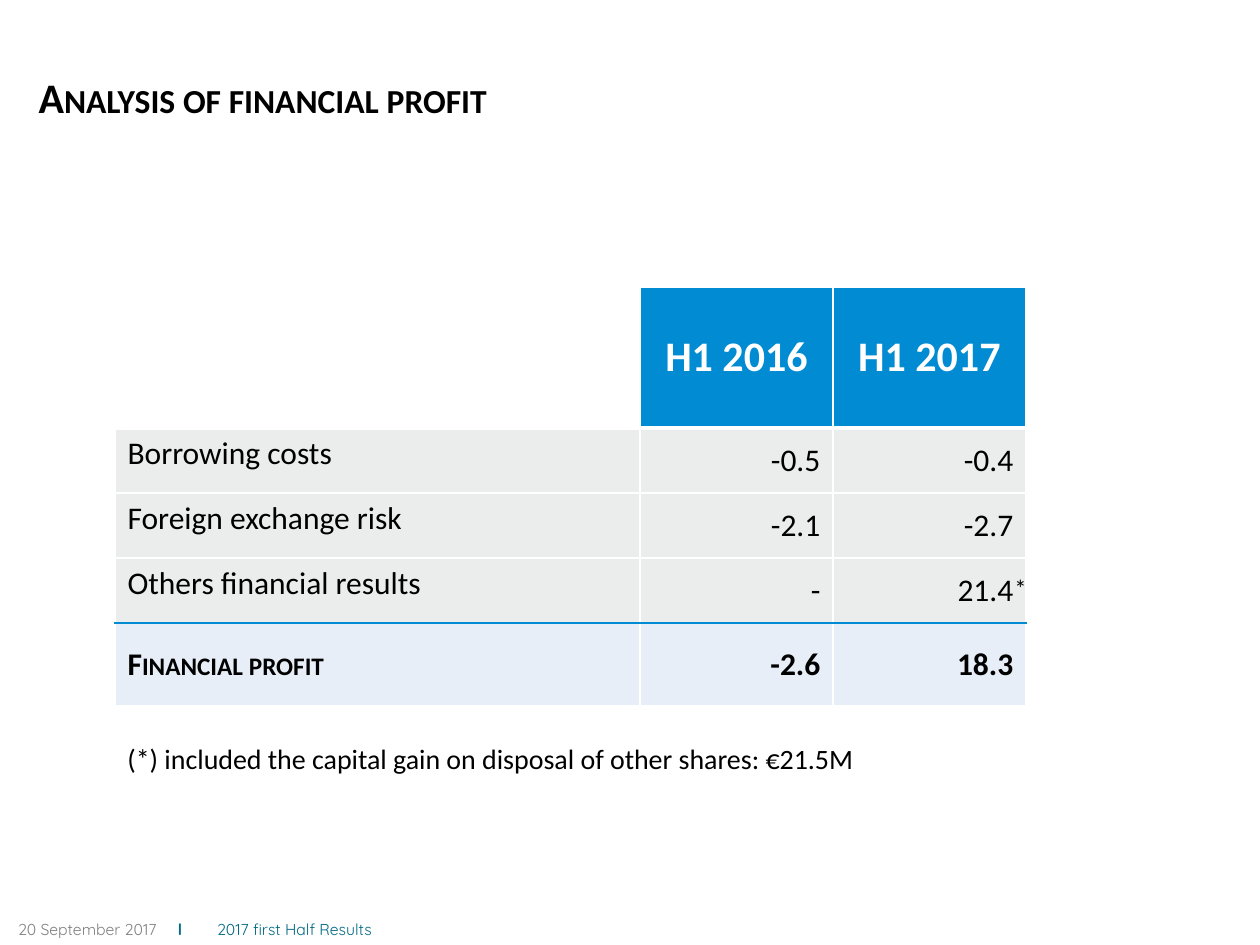
from lxml.etree import SubElement
from pptx import Presentation
from pptx.dml.color import RGBColor
from pptx.enum.text import MSO_ANCHOR as Anchor, MSO_AUTO_SIZE as AutoSize, PP_ALIGN as Align
from pptx.oxml.ns import qn
from pptx.util import Pt

SCALE = 914400 / 126
BLACK, WHITE, BLUE, TEAL, GREY = "000000", "FFFFFF", "008BD2", "006983", "808080"
ROW_FILL, TOTAL_FILL = "EBECEC", "E7EEF7"

TITLE = "Analysis of financial profit"
ROWS = [
    ("", "H1 2016", "H1 2017"),
    ("Borrowing costs", "-0.5", "-0.4"),
    ("Foreign exchange risk", "-2.1", "-2.7"),
    ("Others financial results", "-", "21.4"),
    ("Financial profit", "-2.6", "18.3"),
]
COLUMN_WIDTHS = [525, 193, 193]
ROW_HEIGHTS = [141, 65, 65, 65, 83]
FOOTNOTE = "(*) included the capital gain on disposal of other shares: €21.5M"
FOOTER = [("20 September 2017", GREY, False), ("\tl", TEAL, True),
          ("\t2017 first Half Results", TEAL, False)]
FOOTER_TABS = [160, 199]


def px(value):
    return round(value * SCALE)


def color(hex_value):
    return RGBColor.from_string(hex_value)


def add_run(paragraph, text, size, hex_value=BLACK, bold=False, font="Calibri", small_caps=False):
    run = paragraph.add_run()
    run.text = text
    run.font.name = font
    run.font.size = Pt(size)
    run.font.bold = bold
    run.font.color.rgb = color(hex_value)
    if small_caps:
        run.font._element.set("cap", "small")


def add_text_box(slide, left, top, width, height, wrap=False):
    frame = slide.shapes.add_textbox(px(left), px(top), px(width), px(height)).text_frame
    frame.word_wrap = wrap
    return frame


def set_borders(cell, top, bottom):
    """Draw the four cell borders; top and bottom are (colour, points)."""
    properties = cell._tc.get_or_add_tcPr()
    side = (WHITE, 1)
    for tag, (hex_value, points) in zip(("lnL", "lnR", "lnT", "lnB"), (side, side, top, bottom)):
        line = SubElement(properties, qn(f"a:{tag}"), w=str(Pt(points)))
        fill = SubElement(line, qn("a:solidFill"))
        SubElement(fill, qn("a:srgbClr"), val=hex_value)


def add_title(slide):
    title = slide.shapes.title
    title.left, title.top, title.width, title.height = map(px, (26, 65, 1134, 63))
    frame = title.text_frame
    frame.vertical_anchor = Anchor.TOP
    frame.auto_size = AutoSize.NONE
    paragraph = frame.paragraphs[0]
    paragraph.alignment = Align.LEFT
    add_run(paragraph, TITLE, 24, bold=True, small_caps=True)


def add_results_table(slide):
    table = slide.shapes.add_table(
        len(ROWS), len(COLUMN_WIDTHS), px(115), px(287),
        px(sum(COLUMN_WIDTHS)), px(sum(ROW_HEIGHTS))).table
    table.first_row = table.horz_banding = False
    for column, width in zip(table.columns, COLUMN_WIDTHS):
        column.width = px(width)
    for row, height in zip(table.rows, ROW_HEIGHTS):
        row.height = px(height)

    last = len(ROWS) - 1
    rules = [(WHITE, 1), (WHITE, 3), (WHITE, 1), (WHITE, 1), (BLUE, 1), (WHITE, 1)]
    for r, values in enumerate(ROWS):
        header, total = r == 0, r == last
        for c, text in enumerate(values):
            cell = table.cell(r, c)
            set_borders(cell, rules[r], rules[r + 1])
            cell.fill.solid()
            if header:
                fill = BLUE if text else WHITE
            else:
                fill = TOTAL_FILL if total else ROW_FILL
            cell.fill.fore_color.rgb = color(fill)
            label = c == 0
            cell.vertical_anchor = Anchor.TOP if label and not total else Anchor.MIDDLE
            if not text:
                continue
            paragraph = cell.text_frame.paragraphs[0]
            paragraph.alignment = Align.CENTER if header else Align.LEFT if label else Align.RIGHT
            add_run(paragraph, text, 24 if header else 18, WHITE if header else BLACK,
                    bold=header or total, small_caps=label and total)


def add_footer(slide):
    frame = add_text_box(slide, 18, 911, 625, 37, wrap=True)
    frame.margin_left = frame.margin_top = frame.margin_right = frame.margin_bottom = 0
    frame.vertical_anchor = Anchor.MIDDLE
    paragraph = frame.paragraphs[0]
    tabs = SubElement(paragraph._p.get_or_add_pPr(), qn("a:tabLst"))
    for position in FOOTER_TABS:
        SubElement(tabs, qn("a:tab"), pos=str(px(position)), algn="l")
    for text, hex_value, bold in FOOTER:
        add_run(paragraph, text, 9, hex_value, bold, font="Quicksand")


def main():
    presentation = Presentation()
    presentation.slide_width, presentation.slide_height = px(1260), px(945)
    slide = presentation.slides.add_slide(presentation.slide_layouts[5])
    add_footer(slide)
    add_title(slide)
    add_results_table(slide)
    asterisk = add_text_box(slide, 1002, 567, 38, 43)
    add_run(asterisk.paragraphs[0], "*", 14)
    footnote = add_text_box(slide, 115, 735, 764, 47)
    add_run(footnote.paragraphs[0], FOOTNOTE, 16)
    presentation.save("out.pptx")


if __name__ == "__main__":
    main()
